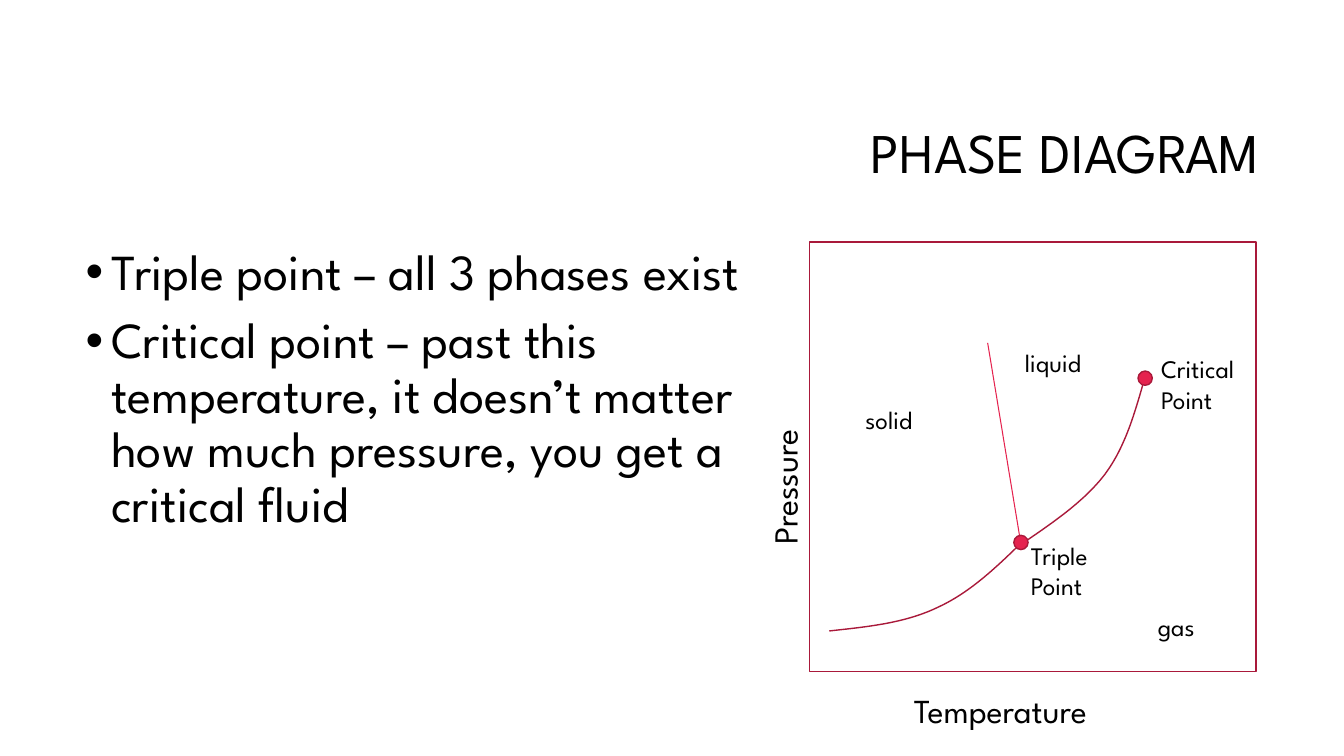
from dataclasses import dataclass

from lxml.etree import SubElement
from pptx import Presentation
from pptx.dml.color import RGBColor
from pptx.enum.shapes import MSO_CONNECTOR as Connector, MSO_SHAPE as Preset
from pptx.enum.text import MSO_ANCHOR as Anchor, PP_ALIGN as Align
from pptx.oxml.ns import qn
from pptx.util import Cm, Pt


@dataclass(frozen=True)
class Theme:
    font: str = "League Spartan"
    text: RGBColor = RGBColor(0x00, 0x00, 0x00)
    outline: RGBColor = RGBColor(0xA9, 0x19, 0x3A)
    accent: RGBColor = RGBColor(0xE5, 0x22, 0x4E)
    title_size: int = 40
    body_size: int = 36
    axis_size: int = 24
    label_size: int = 18


THEME = Theme()
BULLET_INDENT = Cm(0.64)
DOT_SIZE = 0.36
CURVE_STEPS = 24

# Places on the diagram, in centimetres
TRIPLE_POINT = (25.73, 13.67)
CRITICAL_POINT = (28.86, 9.53)
MELTING_LINE = ((25.73, 13.72), (24.89, 8.64))
SUBLIMATION_CURVE = [
    (20.9, 15.9), (21.84, 15.8), (22.81, 15.7), (23.6, 15.32),
    (24.41, 14.96), (25.07, 14.33), (25.7, 13.72),
]
VAPOUR_CURVE = [
    (25.73, 13.72), (26.52, 13.18), (27.31, 12.65), (27.84, 11.96),
    (28.37, 11.25), (28.6, 10.39), (28.85, 9.53),
]
REGION_LABELS = [
    ("solid", (21.56, 10.06, 2.06, 1.02)),
    ("liquid", (25.58, 8.64, 2.62, 1.02)),
    ("gas", (28.93, 15.29, 2.62, 1.02)),
    ("Triple Point", (25.73, 13.49, 2.62, 1.8)),
    ("Critical Point", (29.01, 8.79, 2.95, 1.8)),
]


def add_text(slide, text, box, size, align=Align.LEFT, anchor=Anchor.TOP):
    shape = slide.shapes.add_textbox(*map(Cm, box))
    frame = shape.text_frame
    frame.word_wrap = True
    frame.vertical_anchor = anchor
    frame.text = text
    for paragraph in frame.paragraphs:
        paragraph.alignment = align
        for run in paragraph.runs:
            run.font.name = THEME.font
            run.font.size = Pt(size)
            run.font.color.rgb = THEME.text
    return shape


def add_bullets(slide, items, box):
    shape = add_text(slide, "\n".join(items), box, THEME.body_size)
    for index, paragraph in enumerate(shape.text_frame.paragraphs):
        paragraph.line_spacing = 0.9
        paragraph.space_before = Pt(10 if index else 0)
        properties = paragraph._p.get_or_add_pPr()
        properties.set("marL", str(BULLET_INDENT))
        properties.set("indent", str(-BULLET_INDENT))
        SubElement(properties, qn("a:buFont")).set("typeface", "Arial")
        SubElement(properties, qn("a:buChar")).set("char", "•")


def style_shape(shape, fill=None):
    shape.shadow.inherit = False
    if fill is None:
        shape.fill.background()
    else:
        shape.fill.solid()
        shape.fill.fore_color.rgb = fill
    shape.line.color.rgb = THEME.outline
    shape.line.width = Pt(1)


def bezier_point(controls, t):
    weights = ((1 - t) ** 3, 3 * t * (1 - t) ** 2, 3 * t ** 2 * (1 - t), t ** 3)
    return tuple(
        Cm(sum(weight * value for weight, value in zip(weights, axis)))
        for axis in zip(*controls)
    )


def add_curve(slide, controls):
    """Draw joined cubic arcs; each arc shares its end with the next."""
    points = [
        bezier_point(controls[first:first + 4], step / CURVE_STEPS)
        for first in range(0, len(controls) - 1, 3)
        for step in range(1, CURVE_STEPS + 1)
    ]
    builder = slide.shapes.build_freeform(*map(Cm, controls[0]))
    builder.add_line_segments(points, close=False)
    style_shape(builder.convert_to_shape())


def add_line(slide, start, end):
    line = slide.shapes.add_connector(Connector.STRAIGHT, *map(Cm, start + end))
    line.line.color.rgb = THEME.accent
    line.line.width = Pt(0.75)
    SubElement(line._element.spPr, qn("a:effectLst"))


def add_dot(slide, centre):
    left, top = (Cm(value - DOT_SIZE / 2) for value in centre)
    dot = slide.shapes.add_shape(Preset.OVAL, left, top, Cm(DOT_SIZE), Cm(DOT_SIZE))
    style_shape(dot, THEME.accent)


def add_diagram(slide):
    # Frame and axis titles
    frame = slide.shapes.add_shape(
        Preset.RECTANGLE, Cm(20.4), Cm(6.1), Cm(11.25), Cm(10.82))
    style_shape(frame)
    add_text(slide, "Temperature", (22.78, 17.27, 6.45, 1.27), THEME.axis_size)
    pressure = add_text(slide, "Pressure", (16.54, 10.11, 6.45, 1.27), THEME.axis_size)
    pressure.rotation = 270

    # Phase boundaries
    for controls in (SUBLIMATION_CURVE, VAPOUR_CURVE):
        add_curve(slide, controls)
    add_line(slide, *MELTING_LINE)

    # Points and labels
    for centre in (TRIPLE_POINT, CRITICAL_POINT):
        add_dot(slide, centre)
    for text, box in REGION_LABELS:
        add_text(slide, text, box, THEME.label_size)


def main():
    presentation = Presentation()
    presentation.slide_width = Cm(33.87)
    presentation.slide_height = Cm(19.05)
    slide = presentation.slides.add_slide(presentation.slide_layouts[6])

    # Title and explanation
    title = add_text(slide, "PHASE DIAGRAM", (8.05, 2.13, 23.93, 3.58),
                     THEME.title_size, Align.RIGHT, Anchor.MIDDLE)
    title.text_frame.paragraphs[0].line_spacing = 0.9
    add_bullets(slide, [
        "Triple point – all 3 phases exist",
        "Critical point – past this temperature, it doesn’t matter "
        "how much pressure, you get a critical fluid",
    ], (1.91, 6.1, 17.81, 11.18))

    add_diagram(slide)
    presentation.save("out.pptx")


if __name__ == "__main__":
    main()
